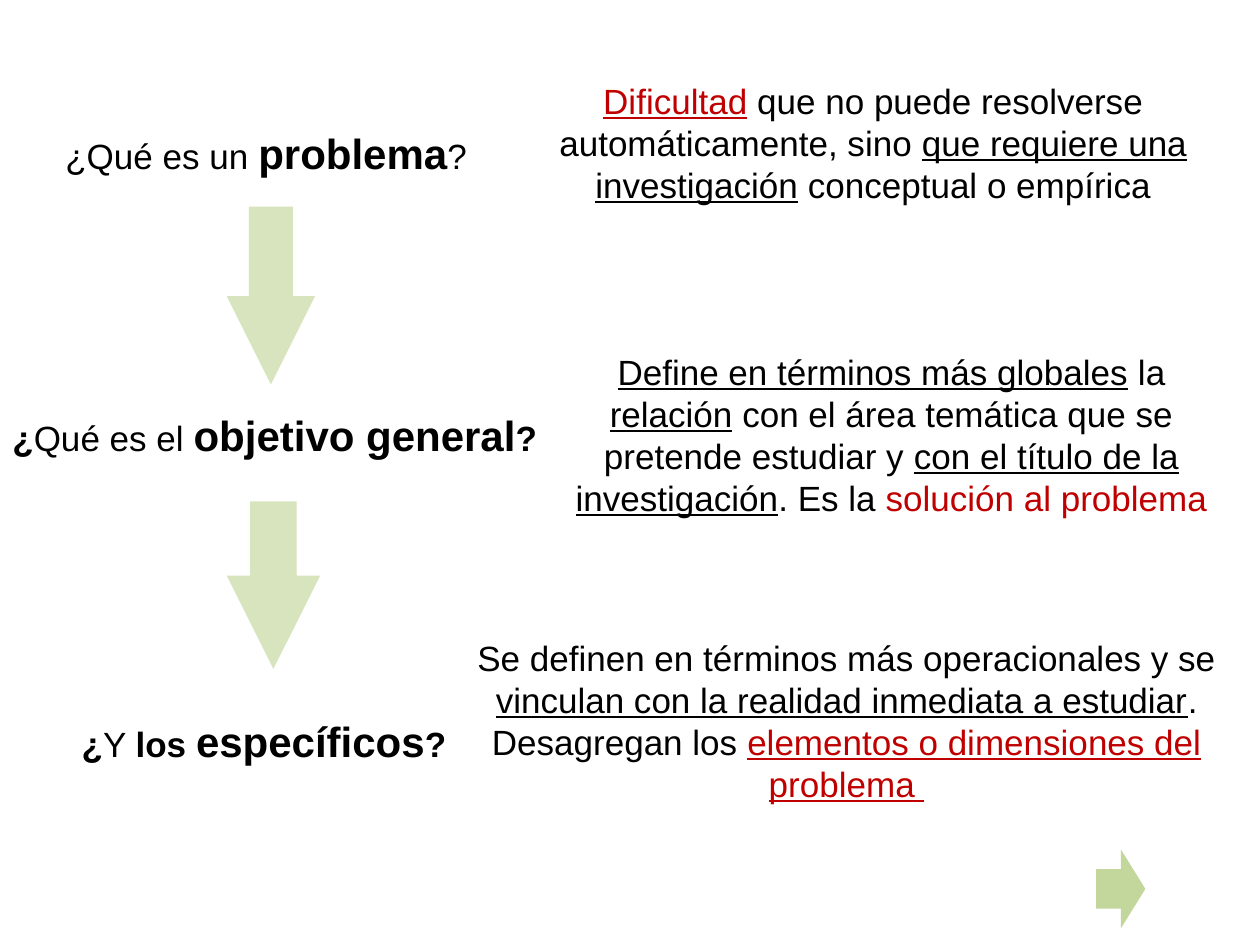
from typing import NamedTuple

from pptx import Presentation
from pptx.dml.color import RGBColor
from pptx.enum.shapes import MSO_SHAPE
from pptx.enum.text import MSO_AUTO_SIZE, PP_ALIGN
from pptx.util import Pt

PX = 9144  # 100 px to the inch
BLACK = RGBColor(0, 0, 0)
RED = RGBColor(0xC0, 0, 0)
PALE = RGBColor(0xD7, 0xE4, 0xBD)
GREEN = RGBColor(0xC3, 0xD6, 0x9B)


class Box(NamedTuple):
    left: int
    top: int
    width: int
    height: int

    def emu(self) -> list[int]:
        return [side * PX for side in self]


class Phrase(NamedTuple):
    text: str
    bold: bool = False
    line: bool = False
    size: int = 20
    color: RGBColor = BLACK


class Label(NamedTuple):
    box: Box
    phrases: list[Phrase]


class Arrow(NamedTuple):
    box: Box
    kind: MSO_SHAPE
    color: RGBColor
    head: float


QUESTIONS = [
    Label(Box(42, 96, 341, 50), [
        Phrase("¿Qué es un "), Phrase("problema", bold=True, size=24),
        Phrase("?")]),
    Label(Box(0, 320, 440, 50), [
        Phrase("¿", bold=True), Phrase("Qué es el "),
        Phrase("objetivo general", bold=True, size=24),
        Phrase("?", bold=True)]),
    Label(Box(55, 563, 312, 50), [
        Phrase("¿", bold=True), Phrase("Y "), Phrase("los ", bold=True),
        Phrase("específicos", bold=True, size=24), Phrase("?", bold=True)]),
]

ANSWERS = [
    Label(Box(417, 58, 552, 111), [
        Phrase("Dificultad", line=True, color=RED),
        Phrase(" que no puede resolverse automáticamente, sino "),
        Phrase("que requiere una investigación", line=True),
        Phrase(" conceptual o empírica")]),
    Label(Box(438, 273, 539, 145), [
        Phrase("Define en términos más globales", line=True),
        Phrase(" la"), Phrase(" relación", line=True),
        Phrase(" con el área temática que se pretende estudiar y "),
        Phrase("con el título de la investigación", line=True),
        Phrase(". Es la "), Phrase("solución al problema", color=RED)]),
    Label(Box(367, 500, 610, 145), [
        Phrase("Se definen en términos más operacionales y se "),
        Phrase("vinculan con la realidad inmediata a estudiar", line=True),
        Phrase(". Desagregan los "),
        Phrase("elementos o dimensiones del problema ", line=True, color=RED)]),
]

ARROWS = [
    Arrow(Box(180, 164, 70, 141), MSO_SHAPE.DOWN_ARROW, PALE, 1),
    Arrow(Box(180, 398, 74, 133), MSO_SHAPE.DOWN_ARROW, PALE, 1),
    Arrow(Box(870, 674, 39, 63), MSO_SHAPE.RIGHT_ARROW, GREEN, 0.5),
]


def add_label(slide, label: Label, wrap: bool, align: PP_ALIGN) -> None:
    frame = slide.shapes.add_textbox(*label.box.emu()).text_frame
    frame.word_wrap = wrap
    frame.auto_size = MSO_AUTO_SIZE.SHAPE_TO_FIT_TEXT
    para = frame.paragraphs[0]
    para.alignment = align
    for phrase in label.phrases:
        run = para.add_run()
        run.text = phrase.text
        font = run.font
        font.name = "Arial"
        font.size = Pt(phrase.size)
        font.bold = phrase.bold
        font.underline = phrase.line
        font.color.rgb = phrase.color


def add_arrow(slide, arrow: Arrow) -> None:
    shape = slide.shapes.add_shape(arrow.kind, *arrow.box.emu())
    shape.adjustments[0] = 0.5
    shape.adjustments[1] = arrow.head
    shape.shadow.inherit = False
    shape.fill.solid()
    shape.fill.fore_color.rgb = arrow.color
    shape.line.fill.background()


def main() -> None:
    deck = Presentation()
    deck.slide_width, deck.slide_height = 1000 * PX, 750 * PX
    slide = deck.slides.add_slide(deck.slide_layouts[6])
    for label in QUESTIONS:
        add_label(slide, label, False, PP_ALIGN.LEFT)
    for label in ANSWERS:
        add_label(slide, label, True, PP_ALIGN.CENTER)
    for arrow in ARROWS:
        add_arrow(slide, arrow)
    deck.save("out.pptx")


if __name__ == "__main__":
    main()
